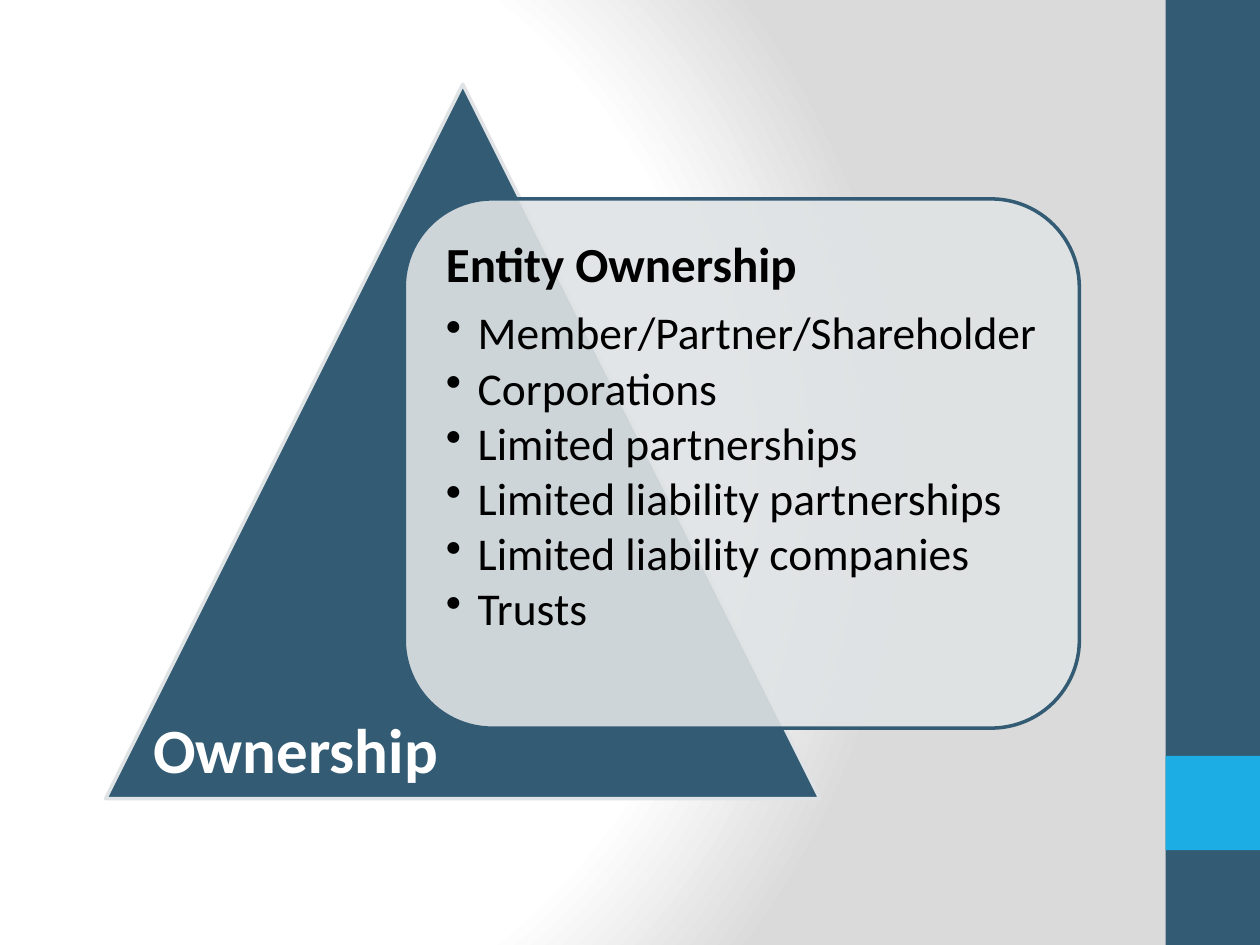
"""Build the entity ownership slide."""
from lxml import etree
from pptx import Presentation, oxml
from pptx import util as u
from pptx.dml.color import RGBColor
from pptx.enum import shapes, text
from pptx.oxml.ns import nsdecls, qn

NAVY = RGBColor(0x33, 0x5B, 0x74)
SKY = RGBColor(0x1C, 0xAD, 0xE4)
PALE = RGBColor(0xDF, 0xE3, 0xE5)
GREY = RGBColor(0xDA, 0xDA, 0xDA)
WHITE = RGBColor(0xFF, 0xFF, 0xFF)
BLACK = RGBColor(0, 0, 0)

OWNERS = [
    "Member/Partner/Shareholder",
    "Corporations",
    "Limited partnerships",
    "Limited liability partnerships",
    "Limited liability companies",
    "Trusts",
]


def set_background(s):
    stops = "".join(
        f'<a:gs pos="{pos}000"><a:srgbClr val="{color}"/></a:gs>'
        for pos, color in [(0, WHITE), (75, WHITE), (100, GREY)]
    )
    bg = oxml.parse_xml(
        f'<p:bg {nsdecls("p", "a")}><p:bgPr><a:gradFill><a:gsLst>{stops}</a:gsLst>'
        '<a:path path="circle"><a:fillToRect l="20000" t="50000" r="100000" b="50000"/>'
        '</a:path></a:gradFill><a:effectLst/></p:bgPr></p:bg>'
    )
    s.element.cSld.insert(0, bg)


def add_box(s, kind, box, fill, line=None, alpha=None):
    sp = s.shapes.add_shape(kind, *map(u.Cm, box))
    sp.shadow.inherit = False
    sp.fill.solid()
    sp.fill.fore_color.rgb = fill
    if alpha:
        color = sp.element.spPr.find(qn("a:solidFill"))[0]
        etree.SubElement(color, qn("a:alpha"), val=str(alpha * 1000))
    if line:
        sp.line.color.rgb = line
        sp.line.width = u.Pt(2)
    else:
        sp.line.fill.background()


def add_text_frame(s, box, inset=None):
    tf = s.shapes.add_textbox(*map(u.Cm, box)).text_frame
    tf.word_wrap = True
    if inset:
        tf.margin_left = tf.margin_right = u.Cm(inset)
        tf.margin_top = tf.margin_bottom = u.Cm(inset)
    return tf


def write(p, content, size, color=BLACK, bold=False, spacing=None, after=None, bullet=False):
    if bullet:
        p.level = 1
        pPr = p._p.get_or_add_pPr()
        pPr.set("marL", str(u.Cm(0.64)))
        pPr.set("indent", str(u.Cm(-0.64)))
        etree.SubElement(pPr, qn("a:buChar"), char="•")
    if spacing:
        p.line_spacing = spacing
    if after:
        p.space_after = u.Pt(after)
    r = p.add_run()
    r.text = content
    r.font.name = "Calibri"
    r.font.size = u.Pt(size)
    r.font.bold = bold
    r.font.color.rgb = color


def main():
    prs = Presentation()
    prs.slide_width, prs.slide_height = u.Cm(25.4), u.Cm(19.05)
    s = prs.slides.add_slide(prs.slide_layouts[6])
    kinds = shapes.MSO_SHAPE

    set_background(s)
    add_box(s, kinds.RECTANGLE, (23.5, 0, 1.9, 19.05), NAVY)
    add_box(s, kinds.RECTANGLE, (23.5, 15.24, 1.9, 1.9), SKY)
    add_box(s, kinds.ISOSCELES_TRIANGLE, (2.13, 1.7, 14.4, 14.4), NAVY, PALE)
    add_box(s, kinds.ROUNDED_RECTANGLE, (8.15, 4.01, 13.61, 10.67), PALE, NAVY, alpha=90)

    tf = add_text_frame(s, (8.69, 4.55, 12.57, 9.63), inset=0.3)
    write(tf.paragraphs[0], "Entity Ownership", 28, bold=True, spacing=0.9, after=9.8)
    for owner in OWNERS:
        write(tf.add_paragraph(), owner, 26, spacing=0.9, after=3.5, bullet=True)

    tf = add_text_frame(s, (2.84, 14.2, 7.82, 1.8))
    tf.auto_size = text.MSO_AUTO_SIZE.SHAPE_TO_FIT_TEXT
    write(tf.paragraphs[0], "Ownership", 36, WHITE, bold=True)

    prs.save("out.pptx")


if __name__ == "__main__":
    main()
